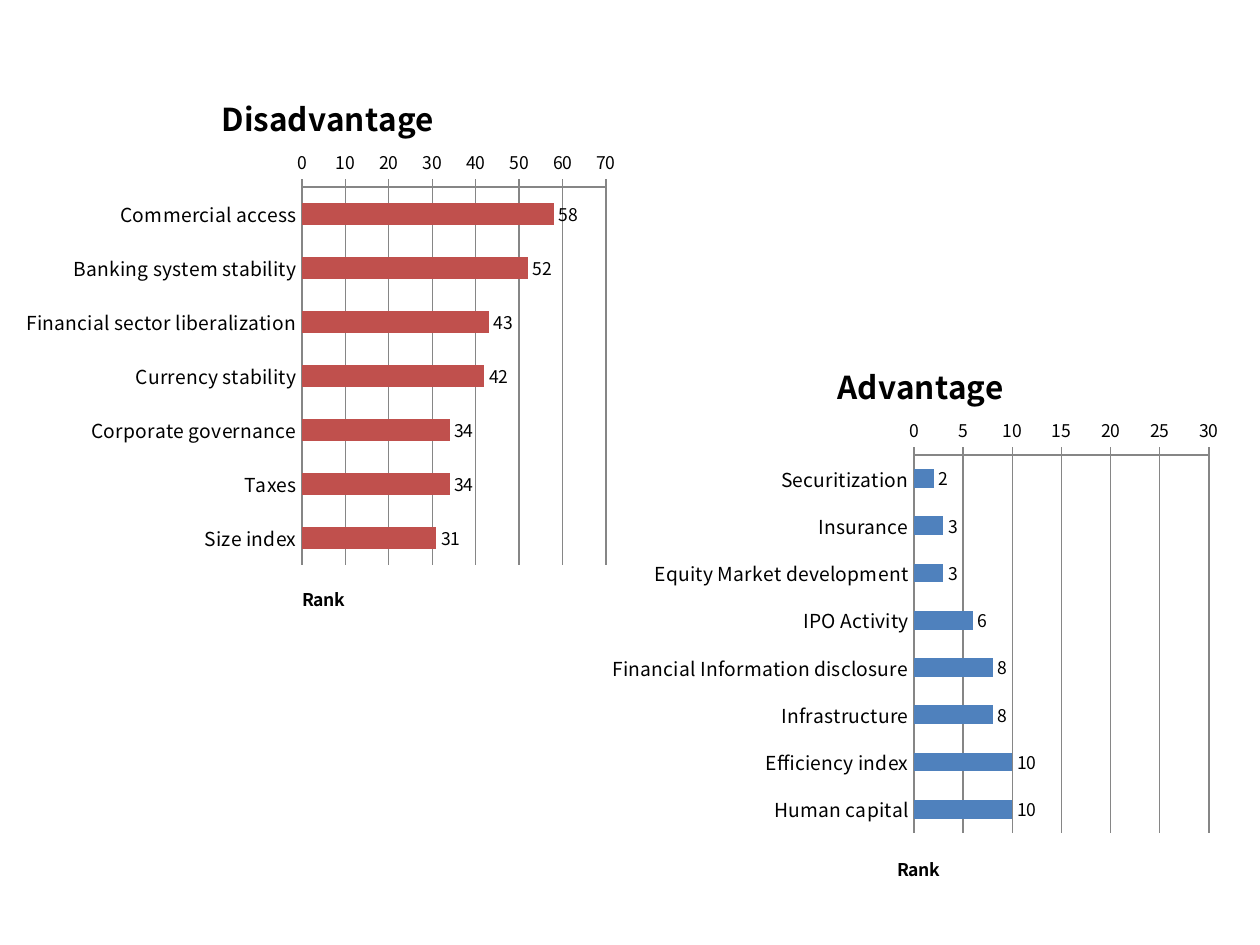
from lxml.etree import SubElement
from pptx import Presentation
from pptx.chart.data import CategoryChartData
from pptx.dml.color import RGBColor
from pptx.enum.chart import XL_CHART_TYPE as ChartType
from pptx.enum.chart import XL_LABEL_POSITION as LabelPosition
from pptx.enum.chart import XL_TICK_MARK as TickMark
from pptx.oxml.ns import qn
from pptx.util import Emu, Pt

FONT = "Noto Sans CJK KR"
BLACK = "000000"
GRID = "868686"

DISADVANTAGES = {
    "Commercial access": 58,
    "Banking system stability": 52,
    "Financial sector liberalization": 43,
    "Currency stability": 42,
    "Corporate governance": 34,
    "Taxes": 34,
    "Size index": 31,
}
ADVANTAGES = {
    "Securitization": 2,
    "Insurance": 3,
    "Equity Market development": 3,
    "IPO Activity": 6,
    "Financial Information disclosure": 8,
    "Infrastructure": 8,
    "Efficiency index": 10,
    "Human capital": 10,
}


def px(length):
    return Emu(round(length * 914400 / 126))


def color(value):
    return RGBColor.from_string(value)


def style_font(font, size, bold=False):
    font.name = FONT
    font.size = Pt(size)
    font.bold = bold
    font.color.rgb = color(BLACK)


def style_line(line):
    line.color.rgb = color(GRID)
    line.width = Pt(0.75)


def place(element, frame, left, top, width=None, height=None):
    frame_left, frame_top, frame_width, frame_height = frame
    for layout in element.findall(qn("c:layout")):
        element.remove(layout)
    layout = SubElement(element, qn("c:layout"))
    text = element.find(qn("c:tx"))
    element.insert(0 if text is None else element.index(text) + 1, layout)
    manual = SubElement(layout, qn("c:manualLayout"))
    settings = {"xMode": "edge", "yMode": "edge"}
    if width:
        settings = {"layoutTarget": "inner", **settings}
    settings["x"] = (left - frame_left) / frame_width
    settings["y"] = (top - frame_top) / frame_height
    if width:
        settings["w"] = width / frame_width
        settings["h"] = height / frame_height
    for name, value in settings.items():
        SubElement(manual, qn(f"c:{name}")).set("val", str(value))


def add_title(title, text, size, frame, left, top):
    title.text_frame.text = text
    style_font(title.text_frame.paragraphs[0].runs[0].font, size, True)
    place(title._element, frame, left, top)


def style_axes(chart, maximum, step):
    category_axis = chart.category_axis
    category_axis.reverse_order = True
    category_axis.major_tick_mark = TickMark.NONE
    style_font(category_axis.tick_labels.font, 11)
    value_axis = chart.value_axis
    value_axis.minimum_scale = 0
    value_axis.maximum_scale = maximum
    value_axis.major_unit = step
    value_axis.major_tick_mark = TickMark.OUTSIDE
    value_axis.has_major_gridlines = True
    style_font(value_axis.tick_labels.font, 10)
    for part in (category_axis, value_axis, value_axis.major_gridlines):
        style_line(part.format.line)


def style_bars(chart, fill):
    plot = chart.plots[0]
    plot.gap_width = 150
    plot.vary_by_categories = False
    bars = plot.series[0].format.fill
    bars.solid()
    bars.fore_color.rgb = color(fill)
    plot.has_data_labels = True
    labels = plot.data_labels
    labels.show_value = True
    labels.position = LabelPosition.OUTSIDE_END
    style_font(labels.font, 10)


def add_rank_chart(slide, title, ranks, fill, frame, area, scale, title_at, rank_at):
    data = CategoryChartData()
    data.categories = list(ranks)
    data.add_series("Series 1", list(ranks.values()))
    chart = slide.shapes.add_chart(
        ChartType.BAR_CLUSTERED, *map(px, frame), data
    ).chart
    chart.has_legend = False
    style_font(chart.font, 10)
    style_axes(chart, *scale)
    style_bars(chart, fill)
    add_title(chart.chart_title, title, 18, frame, *title_at)
    add_title(chart.value_axis.axis_title, "Rank", 10, frame, *rank_at)
    place(chart._chartSpace.chart.plotArea, frame, *area)


def main():
    presentation = Presentation()
    presentation.slide_width = px(1260)
    presentation.slide_height = px(945)
    slide = presentation.slides.add_slide(presentation.slide_layouts[6])
    add_rank_chart(
        slide, "Disadvantage", DISADVANTAGES, "C0504D",
        frame=(15, 55, 612, 577), area=(302, 187, 304, 378),
        scale=(70, 10), title_at=(216, 85), rank_at=(299, 582),
    )
    add_rank_chart(
        slide, "Advantage", ADVANTAGES, "4F81BD",
        frame=(600, 324, 631, 578), area=(914, 455, 295, 378),
        scale=(30, 5), title_at=(832, 353), rank_at=(894, 852),
    )
    presentation.save("out.pptx")


if __name__ == "__main__":
    main()
